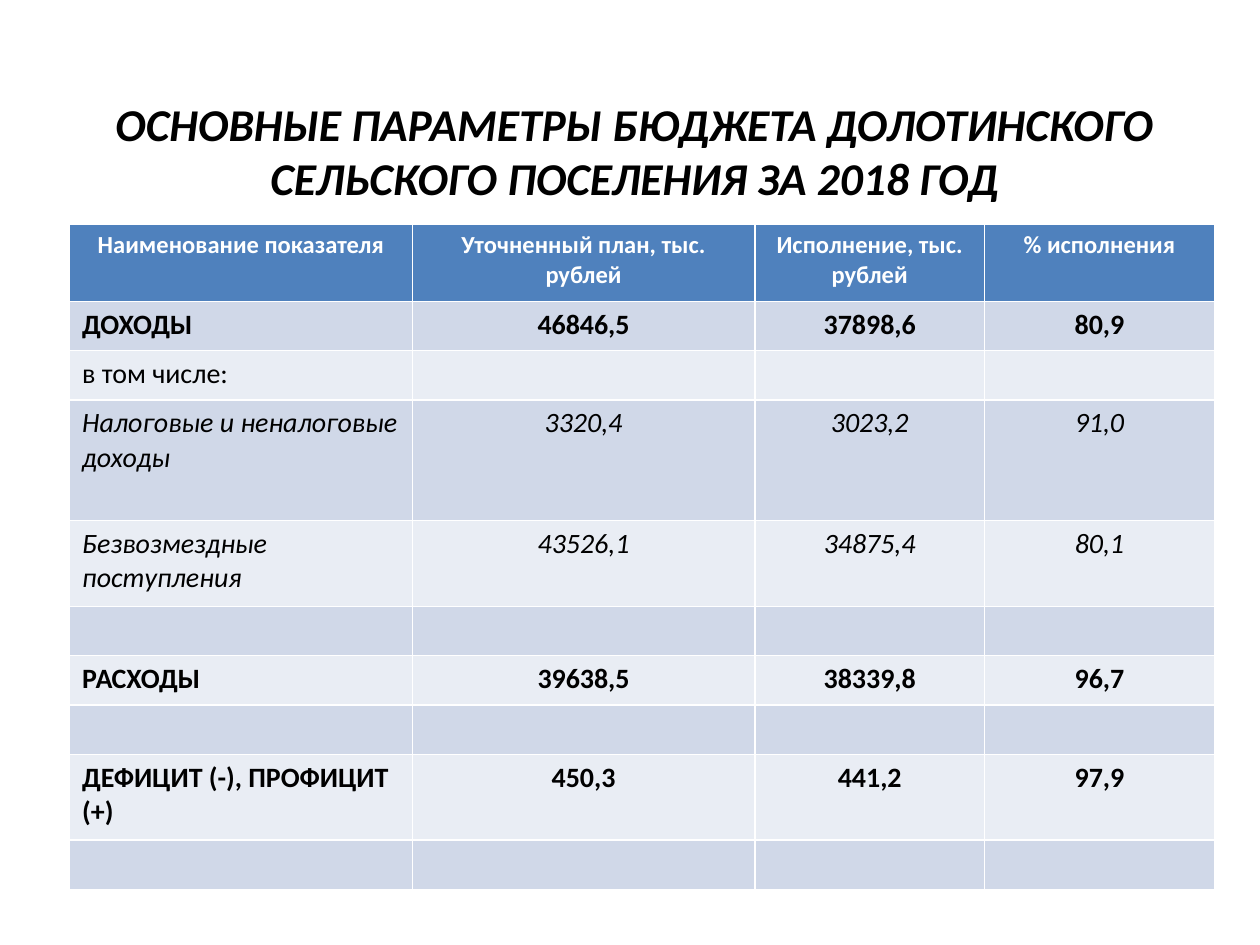
"""Builds a slide with the main budget figures of a rural settlement."""
from lxml import etree
from pptx import Presentation
from pptx.dml.color import RGBColor
from pptx.enum.text import MSO_ANCHOR, PP_ALIGN
from pptx.oxml.ns import qn
from pptx.util import Pt

LEFT, CENTER = PP_ALIGN.LEFT, PP_ALIGN.CENTER
MIDDLE = MSO_ANCHOR.MIDDLE
TITLE_ONLY = 5

TITLE = "ОСНОВНЫЕ ПАРАМЕТРЫ БЮДЖЕТА ДОЛОТИНСКОГО СЕЛЬСКОГО ПОСЕЛЕНИЯ ЗА 2018 ГОД"
HEADINGS = ("Наименование показателя", "Уточненный план, тыс. рублей",
            "Исполнение, тыс. рублей", "% исполнения")
EMPTY = ("", "", "", "")
BOLD, ITALIC, PLAIN = {"bold": True}, {"italic": True}, {}
COLUMN_WIDTHS = (195.8, 195.8, 131.3, 131.3)
HEADING_HEIGHT, LINE_HEIGHT, DOUBLE_HEIGHT, TALL_HEIGHT = 44, 28.2, 49, 69
BUDGET_ROWS = (
    (LINE_HEIGHT, BOLD, ("ДОХОДЫ", "46846,5", "37898,6", "80,9")),
    (LINE_HEIGHT, PLAIN, ("в том числе:", "", "", "")),
    (TALL_HEIGHT, ITALIC, ("Налоговые и неналоговые доходы", "3320,4", "3023,2", "91,0")),
    (DOUBLE_HEIGHT, ITALIC, ("Безвозмездные поступления", "43526,1", "34875,4", "80,1")),
    (LINE_HEIGHT, PLAIN, EMPTY),
    (LINE_HEIGHT, BOLD, ("РАСХОДЫ", "39638,5", "38339,8", "96,7")),
    (LINE_HEIGHT, PLAIN, EMPTY),
    (DOUBLE_HEIGHT, BOLD, ("ДЕФИЦИТ (-), ПРОФИЦИТ (+)", "450,3", "441,2", "97,9")),
    (LINE_HEIGHT, PLAIN, EMPTY),
)


def color(value):
    return RGBColor.from_string(value)


class BudgetPage:
    font = "Calibri"
    dark, light = "000000", "FFFFFF"
    heading_fill = "4F81BD"
    band_fills = ("D0D8E8", "E9EDF4")
    title_size, heading_size, body_size = 26, 14, 16

    def __init__(self, deck):
        self.page = deck.slides.add_slide(deck.slide_layouts[TITLE_ONLY])

    def add_text(self, para, text, size, ink, align, bold=False, italic=False):
        para.alignment = align
        if not text:
            end = etree.SubElement(para._p, qn("a:endParaRPr"))
            end.set("sz", str(size * 100))
            return
        span = para.add_run()
        span.text = text
        span.font.name = self.font
        span.font.size = Pt(size)
        span.font.bold = bold
        span.font.italic = italic
        span.font.color.rgb = color(ink)

    def title(self, text, left, top, width, height):
        box = self.page.shapes.title
        box.left, box.top, box.width, box.height = map(Pt, (left, top, width, height))
        box.text_frame.vertical_anchor = MIDDLE
        self.add_text(box.text_frame.paragraphs[0], text, self.title_size, self.dark,
                      CENTER, bold=True, italic=True)

    def fill_row(self, cells, texts, fill, size, ink, first_align, style):
        for index, (cell, text) in enumerate(zip(cells, texts)):
            cell.fill.solid()
            cell.fill.fore_color.rgb = color(fill)
            align = CENTER if index else first_align
            self.add_text(cell.text_frame.paragraphs[0], text, size, ink, align, **style)

    def table(self, left, top, widths, headings, rows):
        heights = [HEADING_HEIGHT] + [height for height, _, _ in rows]
        frame = self.page.shapes.add_table(len(heights), len(widths), Pt(left), Pt(top),
                                           Pt(sum(widths)), Pt(sum(heights)))
        table = frame.table
        for column, width in zip(table.columns, widths):
            column.width = Pt(width)
        for row, height in zip(table.rows, heights):
            row.height = Pt(height)
        self.fill_row(table.rows[0].cells, headings, self.heading_fill,
                      self.heading_size, self.light, CENTER, BOLD)
        for index, (_, style, texts) in enumerate(rows):
            self.fill_row(table.rows[index + 1].cells, texts, self.band_fills[index % 2],
                          self.body_size, self.dark, LEFT, style)


def main():
    deck = Presentation()
    deck.slide_width, deck.slide_height = Pt(720), Pt(540)
    page = BudgetPage(deck)
    page.title(TITLE, 8.6, 44.6, 708.5, 82.8)
    page.table(39.8, 128.2, COLUMN_WIDTHS, HEADINGS, BUDGET_ROWS)
    deck.save("out.pptx")


if __name__ == "__main__":
    main()
